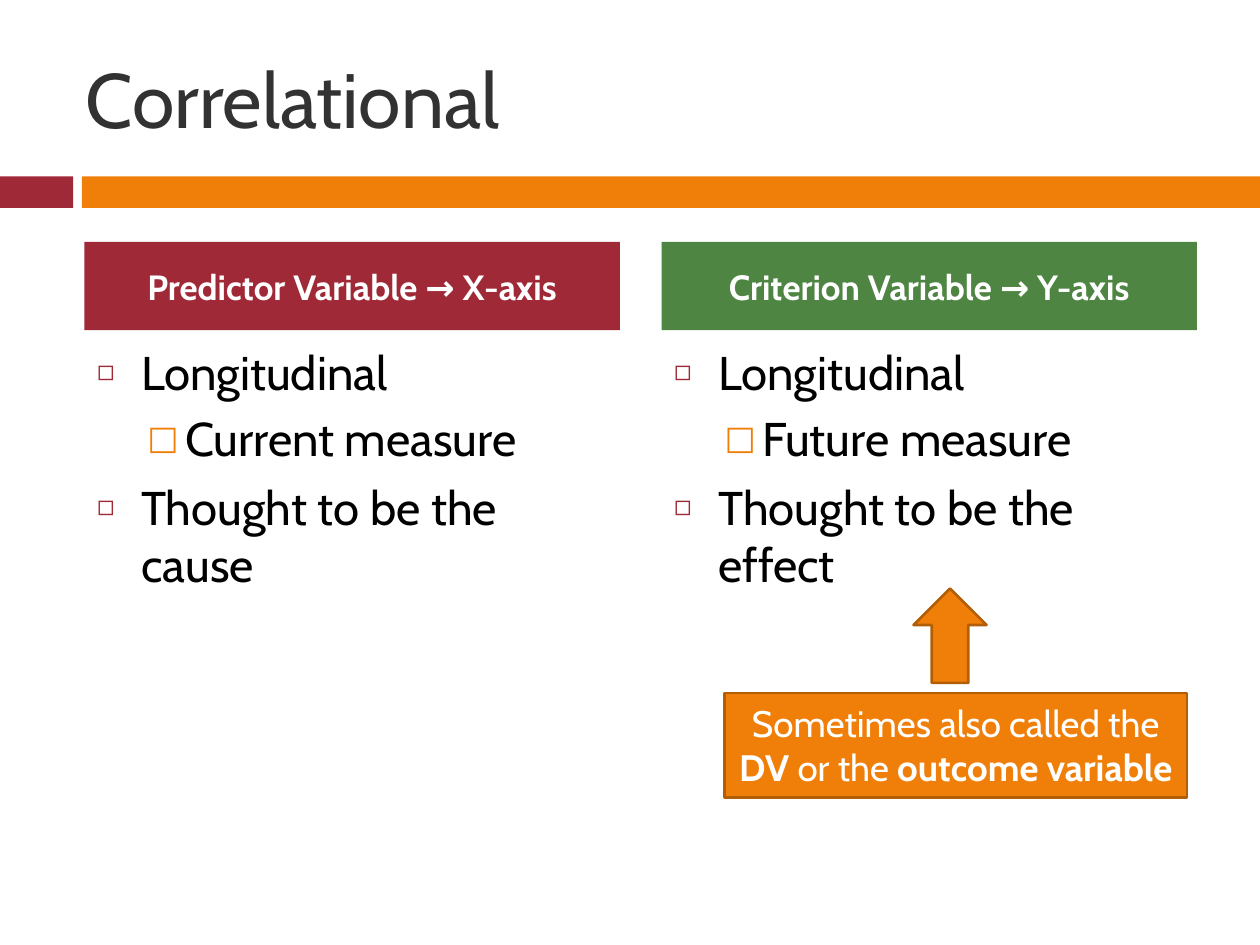
from lxml import etree
from pptx import Presentation
from pptx import util as u
from pptx.dml import color
from pptx.enum import shapes, text
from pptx.oxml import ns

FONT = "Cabin"
RED, ORANGE, GREEN, BROWN = "9F2936", "F07F09", "4E8542", "B25E07"
WHITE, BLACK, GREY = "FFFFFF", "000000", "323232"
LEVELS = [
    {"indent": 0.35, "hanging": 0.35, "before": 7, "char": "◻", "hue": RED, "percent": 60},
    {"indent": 0.7, "hanging": 0.3, "before": 5.5, "char": "□", "hue": ORANGE, "percent": 70},
]


def rgb(value):
    return color.RGBColor.from_string(value)


def place(part, left, top, width, height):
    part.left, part.top = u.Inches(left), u.Inches(top)
    part.width, part.height = u.Inches(width), u.Inches(height)


def set_frame(part, anchor):
    frame = part.text_frame
    frame.word_wrap = True
    frame.auto_size = text.MSO_AUTO_SIZE.NONE
    frame.vertical_anchor = anchor
    return frame


def add_run(paragraph, words, size, hue, bold=False):
    run = paragraph.add_run()
    run.text = words
    run.font.name = FONT
    run.font.size = u.Pt(size)
    run.font.bold = bold
    run.font.color.rgb = rgb(hue)


def set_bullet(paragraph, level):
    style = LEVELS[level]
    paragraph.level = level
    paragraph.space_before = u.Pt(style["before"])
    props = paragraph._p.get_or_add_pPr()
    props.set("marL", str(u.Inches(style["indent"])))
    props.set("indent", str(-u.Inches(style["hanging"])))
    hue = etree.SubElement(props, ns.qn("a:buClr"))
    etree.SubElement(hue, ns.qn("a:srgbClr"), val=style["hue"])
    etree.SubElement(props, ns.qn("a:buSzPct"), val=str(style["percent"] * 1000))
    etree.SubElement(props, ns.qn("a:buFont"), typeface=FONT)
    etree.SubElement(props, ns.qn("a:buChar"), char=style["char"])


def add_block(slide, kind, box, fill, outline=None):
    block = slide.shapes.add_shape(kind, *map(u.Inches, box))
    block.shadow.inherit = False
    block.fill.solid()
    block.fill.fore_color.rgb = rgb(fill)
    if outline:
        block.line.color.rgb = rgb(outline)
        block.line.width = u.Pt(1.5)
    else:
        block.line.fill.background()
    return block


def add_band(slide, left, top, width, height):
    accent, gap = 0.58, 0.07
    start = left + accent + gap
    rectangle = shapes.MSO_SHAPE.RECTANGLE
    add_block(slide, rectangle, (left, top, accent, height), RED)
    add_block(slide, rectangle, (start, top, left + width - start, height), ORANGE)


def fill_title(title, words, left, top, width, height):
    place(title, left, top, width, height)
    heading = set_frame(title, text.MSO_ANCHOR.MIDDLE).paragraphs[0]
    heading.alignment = text.PP_ALIGN.LEFT
    add_run(heading, words, 44, GREY)


def fill_column(header, points, variable, fill, items, left, top, width, height):
    header_height, gap = 0.7, 0.05
    place(header, left, top, width, header_height)
    header.fill.solid()
    header.fill.fore_color.rgb = rgb(fill)
    label = set_frame(header, text.MSO_ANCHOR.MIDDLE).paragraphs[0]
    label.alignment = text.PP_ALIGN.CENTER
    label.space_before = u.Pt(7)
    add_run(label, variable, 20, WHITE, True)

    offset = header_height + gap
    place(points, left, top + offset, width, height - offset)
    frame = set_frame(points, text.MSO_ANCHOR.TOP)
    for number, (level, words) in enumerate(items):
        point = frame.add_paragraph() if number else frame.paragraphs[0]
        set_bullet(point, level)
        add_run(point, words, 27, BLACK)


def add_callout(slide, left, top, width, height):
    note_height, arrow_height = 0.83, 0.75
    note_box = (left, top + height - note_height, width, note_height)
    note = add_block(slide, shapes.MSO_SHAPE.RECTANGLE, note_box, ORANGE, BROWN)
    remark = set_frame(note, text.MSO_ANCHOR.MIDDLE).paragraphs[0]
    remark.alignment = text.PP_ALIGN.CENTER
    for words, bold in [
        ("Sometimes also called the ", False),
        ("DV", True),
        (" or the ", False),
        ("outcome variable", True),
    ]:
        add_run(remark, words, 21, WHITE, bold)
    arrow_box = (left + 1.5, top, 0.58, arrow_height)
    add_block(slide, shapes.MSO_SHAPE.UP_ARROW, arrow_box, ORANGE, BROWN)


def main():
    deck = Presentation()
    deck.slide_width, deck.slide_height = u.Inches(10), u.Inches(7.5)
    slide = deck.slides.add_slide(deck.slide_layouts.get_by_name("Comparison"))
    title, *bodies = slide.placeholders

    add_band(slide, 0, 1.4, 10, 0.25)
    fill_title(title, "Correlational", 0.58, 0.3, 8.92, 0.95)
    columns = [
        ("Predictor Variable → X-axis", RED, "Current measure", "cause", 0.67),
        ("Criterion Variable → Y-axis", GREEN, "Future measure", "effect", 5.25),
    ]
    for number, (variable, fill, measure, role, left) in enumerate(columns):
        header, points = bodies[2 * number:2 * number + 2]
        items = [(0, "Longitudinal"), (1, measure), (0, f"Thought to be the {role}")]
        fill_column(header, points, variable, fill, items, left, 1.92, 4.25, 3.87)
    add_callout(slide, 5.75, 4.67, 3.67, 1.66)
    deck.save("out.pptx")


if __name__ == "__main__":
    main()
